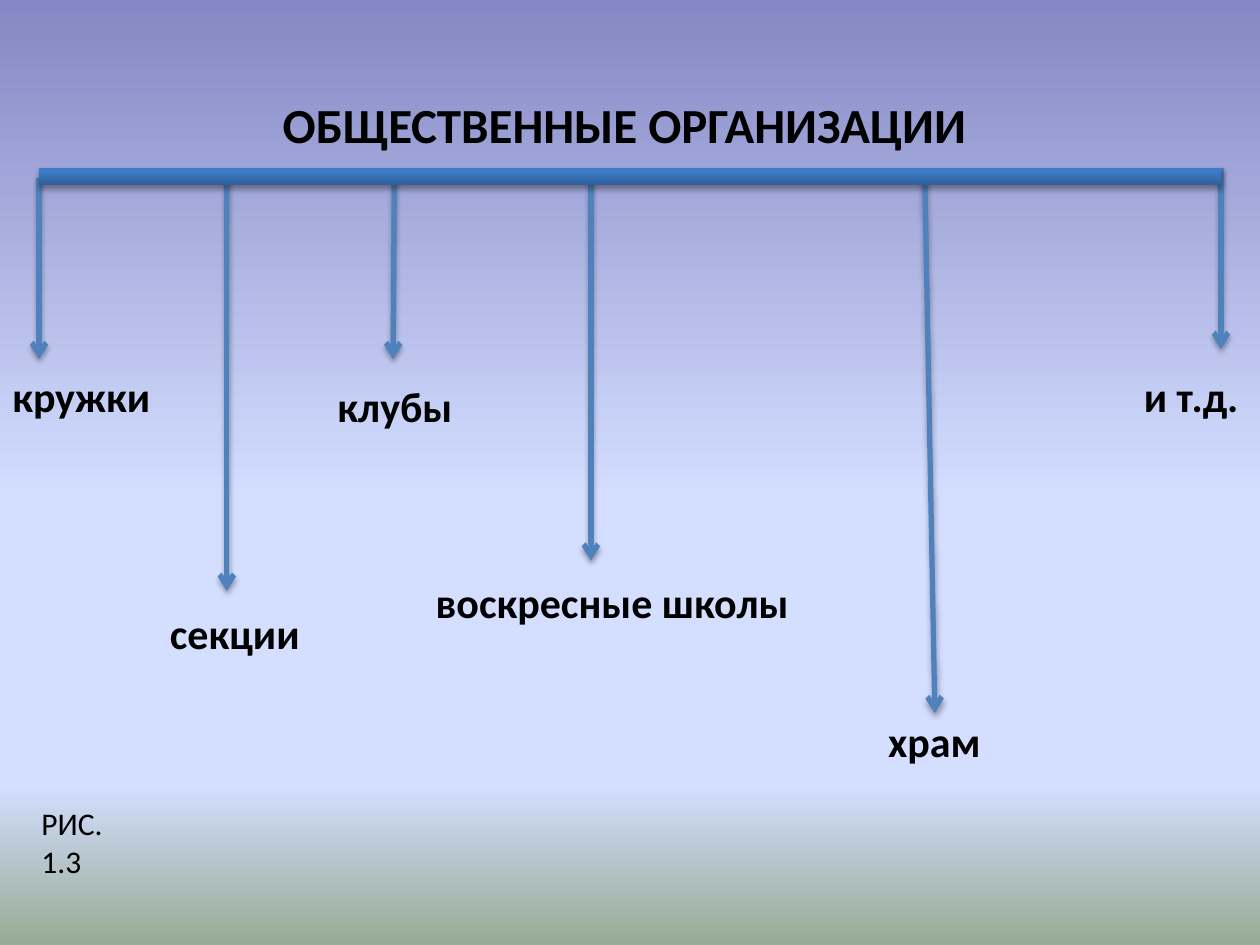
from lxml.etree import SubElement
from pptx import Presentation
from pptx.dml.color import RGBColor
from pptx.enum.shapes import MSO_CONNECTOR, MSO_SHAPE
from pptx.enum.text import MSO_AUTO_SIZE, PP_ALIGN
from pptx.oxml.ns import qn
from pptx.util import Inches, Pt

COLORS = {
    "text": "000000",
    "arrow": "4F81BD",
    "shadow": "000000",
    "sky_top": "8488C4",
    "sky": "D4DEFF",
    "ground": "96AB94",
    "bar_dark": "2F5F99",
    "bar_middle": "3D7CC7",
    "bar_light": "3A7CCB",
}
BACKGROUND_STOPS = [(0, "sky_top"), (53, "sky"), (83, "sky"), (100, "ground")]
BAR_STOPS = [(0, "bar_dark"), (80, "bar_middle"), (100, "bar_light")]

ARROWS = [
    (0.31, 1.41, 0.31, 2.85),
    (1.8, 1.41, 1.8, 4.69),
    (3.13, 1.41, 3.12, 2.85),
    (4.69, 1.41, 4.69, 4.45),
    (7.34, 1.41, 7.42, 5.66),
    (9.69, 1.33, 9.69, 2.77),
]
LABELS = [
    ("кружки", (0, 2.89, 1.33, 0.5)),
    ("секции", (1.25, 4.77, 1.41, 0.5)),
    ("клубы", (2.58, 2.97, 1.17, 0.5)),
    ("воскресные школы", (3.36, 4.53, 3.13, 0.5)),
    ("храм", (6.95, 5.63, 1.02, 0.5)),
    ("и т.д.", (8.98, 2.89, 1.02, 0.5)),
]


def set_gradient(fill, element, stops, angle):
    """Give a fill, held in the element, a linear gradient with any number of stops."""
    fill.gradient()
    fill.gradient_angle = angle
    stop_list = element.find(".//" + qn("a:gsLst"))
    for stop in list(stop_list):
        stop_list.remove(stop)
    for position, color in stops:
        stop = SubElement(stop_list, qn("a:gs"), pos=str(position * 1000))
        SubElement(stop, qn("a:srgbClr"), val=COLORS[color])


def add_shadow(shape):
    """Cast a soft shadow straight down from the shape."""
    properties = shape._element.spPr
    effects = SubElement(properties, qn("a:effectLst"))
    shadow = SubElement(effects, qn("a:outerShdw"), blurRad=str(Pt(3.1)),
                        dist=str(Pt(1.8)), dir="5400000", rotWithShape="0")
    color = SubElement(shadow, qn("a:srgbClr"), val=COLORS["shadow"])
    SubElement(color, qn("a:alpha"), val="35000")


def add_text(slide, text, box, size, bold=True, alignment=PP_ALIGN.LEFT):
    """Write one paragraph in a text box."""
    frame = slide.shapes.add_textbox(*map(Inches, box)).text_frame
    frame.word_wrap = True
    frame.auto_size = MSO_AUTO_SIZE.SHAPE_TO_FIT_TEXT
    paragraph = frame.paragraphs[0]
    paragraph.text = text
    paragraph.alignment = alignment
    paragraph.font.name = "Calibri"
    paragraph.font.size = Pt(size)
    paragraph.font.bold = bold
    paragraph.font.color.rgb = RGBColor.from_string(COLORS["text"])


def add_arrow(slide, ends):
    """Draw an arrow from the bar to a label."""
    arrow = slide.shapes.add_connector(MSO_CONNECTOR.STRAIGHT, *map(Inches, ends))
    arrow.line.color.rgb = RGBColor.from_string(COLORS["arrow"])
    arrow.line.width = Pt(3)
    SubElement(arrow.line._get_or_add_ln(), qn("a:tailEnd"), type="arrow")
    add_shadow(arrow)


def add_bar(slide, box):
    """Draw the bar from which the arrows hang."""
    bar = slide.shapes.add_shape(MSO_SHAPE.RECTANGLE, *map(Inches, box))
    set_gradient(bar.fill, bar._element, BAR_STOPS, 90)
    bar.line.fill.background()
    add_shadow(bar)


def build_slide(presentation):
    """Build the diagram of public organisations."""
    slide = presentation.slides.add_slide(presentation.slide_layouts[6])
    set_gradient(slide.background.fill, slide._element, BACKGROUND_STOPS, 270)
    add_text(slide, "ОБЩЕСТВЕННЫЕ ОРГАНИЗАЦИИ", (1.09, 0.7, 7.73, 0.57), 28,
             alignment=PP_ALIGN.CENTER)
    for ends in ARROWS:
        add_arrow(slide, ends)
    for text, box in LABELS:
        add_text(slide, text, box, 24)
    add_text(slide, "РИС.\n1.3", (0.23, 6.33, 1.02, 0.71), 18, bold=False)
    add_bar(slide, (0.31, 1.33, 9.38, 0.14))


def main():
    """Create and save the presentation."""
    presentation = Presentation()
    presentation.slide_width = Inches(10)
    presentation.slide_height = Inches(7.5)
    build_slide(presentation)
    presentation.save("out.pptx")


if __name__ == "__main__":
    main()
